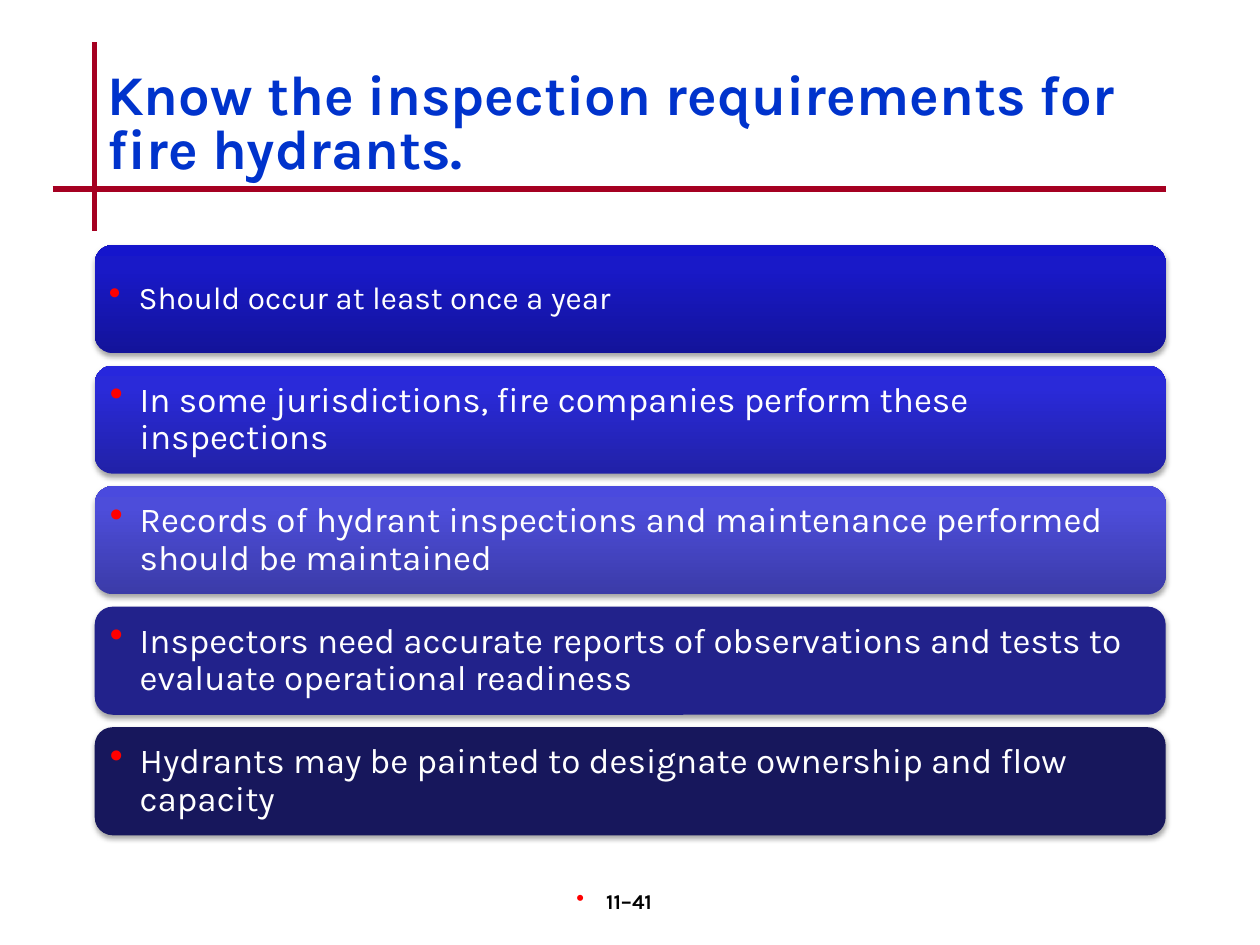
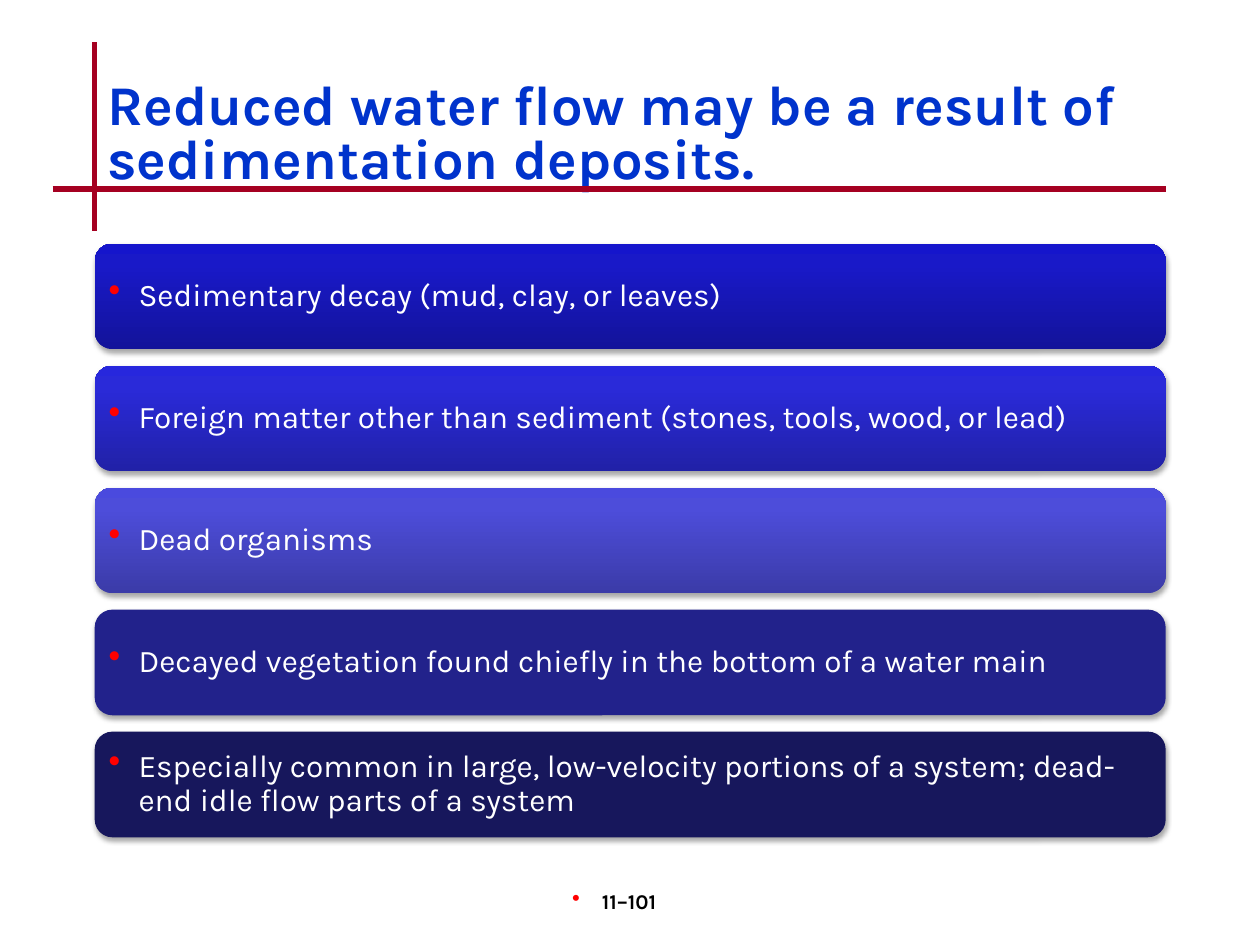
import copy

import pptx
import pptx.dml.color
import pptx.enum.shapes
import pptx.enum.text
import pptx.oxml
import pptx.oxml.ns
import pptx.util
from pptx.util import Cm

FONT = "Karla"
COLORS = {
    "title": "0033CC",
    "rule": "A50021",
    "bullet": "FF0000",
    "bar text": "FFFFFF",
    "footer": "000000",
    "shadow": "000000",
}
# One fill per bar: three gradient stops from bottom to top, or one plain colour
BAR_FILLS = [
    ("13139A", "1919C8", "1515CC"),
    ("2121A7", "2A2AD9", "2727DD"),
    ("3B3BA8", "4D4DDA", "4A4ADE"),
    ("22228B",),
    ("17175C",),
]
STOP_POSITIONS = (0, 0.8, 1)
LEFT, WIDTH = Cm(1.91), Cm(21.59)
MIDDLE = pptx.enum.text.MSO_ANCHOR.MIDDLE


def rgb(value):
    return pptx.dml.color.RGBColor.from_string(value)


def add_xml(parent, xml):
    namespace = pptx.oxml.ns.nsdecls("a")
    parent.append(pptx.oxml.parse_xml(xml.replace("/>", f" {namespace}/>", 1)
                                      if xml.endswith("/>") and xml.count("<") == 1
                                      else xml.replace(">", f" {namespace}>", 1)))


def set_font(paragraph, size, color, bold=False):
    font = paragraph.font
    font.name = FONT
    font.size = pptx.util.Pt(size)
    font.bold = bold
    font.color.rgb = rgb(color)


def add_bullet(paragraph, margin, hanging):
    properties = paragraph._p.get_or_add_pPr()
    properties.set("marL", str(margin))
    properties.set("indent", str(-hanging))
    add_xml(properties, f'<a:buClr><a:srgbClr val="{COLORS["bullet"]}"/></a:buClr>')
    add_xml(properties, '<a:buSzPct val="110000"/>')
    add_xml(properties, '<a:buChar char="•"/>')


def add_rule(slide, x1, y1, x2, y2):
    rule = slide.shapes.add_connector(
        pptx.enum.shapes.MSO_CONNECTOR.STRAIGHT, x1, y1, x2, y2)
    rule.line.color.rgb = rgb(COLORS["rule"])
    rule.line.width = pptx.util.Pt(3)
    add_xml(rule._element.spPr, "<a:effectLst/>")


def set_title(slide, text, top):
    title = slide.shapes.title
    title.left, title.top, title.width, title.height = LEFT, top, WIDTH, Cm(2.54)
    frame = title.text_frame
    frame.text = text
    frame.vertical_anchor = MIDDLE
    frame.auto_size = pptx.enum.text.MSO_AUTO_SIZE.NONE
    paragraph = frame.paragraphs[0]
    paragraph.alignment = pptx.enum.text.PP_ALIGN.LEFT
    paragraph.line_spacing = 0.8
    set_font(paragraph, 32, COLORS["title"], bold=True)


def add_page_number(slide, text):
    box = slide.shapes.add_textbox(Cm(9.96), Cm(17.78), Cm(5.28), Cm(1.27))
    box.text_frame.word_wrap = True
    paragraph = box.text_frame.paragraphs[0]
    paragraph.text = text
    paragraph.alignment = pptx.enum.text.PP_ALIGN.CENTER
    add_bullet(paragraph, Cm(0.13), Cm(0.6))
    set_font(paragraph, 12, COLORS["footer"], bold=True)


def fill_bar(bar, colors):
    if len(colors) == 1:
        bar.fill.solid()
        bar.fill.fore_color.rgb = rgb(colors[0])
        return
    bar.fill.gradient()
    bar.fill.gradient_angle = 90
    stops = bar._element.spPr.find(".//" + pptx.oxml.ns.qn("a:gsLst"))
    stops.append(copy.deepcopy(stops[0]))
    for stop, color, position in zip(bar.fill.gradient_stops, colors, STOP_POSITIONS):
        stop.color.rgb = rgb(color)
        stop.position = position


def add_shadow(bar):
    bar.shadow.inherit = False
    effects = bar._element.spPr.find(pptx.oxml.ns.qn("a:effectLst"))
    add_xml(effects,
            '<a:outerShdw blurRad="39370" dist="22860" dir="5400000" rotWithShape="0">'
            f'<a:srgbClr val="{COLORS["shadow"]}"><a:alpha val="35000"/></a:srgbClr>'
            "</a:outerShdw>")


def add_bar(slide, text, size, top, height, colors):
    bar = slide.shapes.add_shape(
        pptx.enum.shapes.MSO_SHAPE.ROUNDED_RECTANGLE, LEFT, top, WIDTH, height)
    fill_bar(bar, colors)
    bar.line.fill.background()
    add_shadow(bar)
    frame = bar.text_frame
    frame.word_wrap = True
    frame.vertical_anchor = MIDDLE
    inset = Cm(size / 100)
    frame.margin_left = frame.margin_right = inset
    frame.margin_top = frame.margin_bottom = inset
    paragraph = frame.paragraphs[0]
    paragraph.text = text
    paragraph.alignment = pptx.enum.text.PP_ALIGN.LEFT
    paragraph.line_spacing = 0.9
    add_bullet(paragraph, Cm(0.6), Cm(0.6))
    set_font(paragraph, size, COLORS["bar text"])


def add_bar_slide(presentation, title, title_top, number, bars, top, height, pitch):
    slide = presentation.slides.add_slide(presentation.slide_layouts[5])
    # Crossed rules, title and page number
    add_rule(slide, LEFT, Cm(0.85), LEFT, Cm(4.66))
    add_rule(slide, Cm(1.06), Cm(3.81), LEFT + WIDTH, Cm(3.81))
    set_title(slide, title, title_top)
    add_page_number(slide, number)
    # Stack of bars
    for index, ((text, size), colors) in enumerate(zip(bars, BAR_FILLS)):
        add_bar(slide, text, size, top + index * pitch, height, colors)


def main():
    presentation = pptx.Presentation()
    presentation.slide_width, presentation.slide_height = Cm(25.4), Cm(19.05)

    # Hydrant inspections
    add_bar_slide(
        presentation, "Know the inspection requirements for fire hydrants.",
        Cm(1.27), "11–41",
        [("Should occur at least once a year", 18),
         ("In some jurisdictions, fire companies perform these inspections", 20),
         ("Records of hydrant inspections and maintenance performed "
          "should be maintained", 20),
         ("Inspectors need accurate reports of observations and tests to "
          "evaluate operational readiness", 20),
         ("Hydrants may be painted to designate ownership and flow capacity", 20)],
        top=Cm(4.94), height=Cm(2.18), pitch=Cm(2.43))

    # Sedimentation deposits
    deposits = [
        "Sedimentary decay (mud, clay, or leaves)",
        "Foreign matter other than sediment (stones, tools, wood, or lead)",
        "Dead organisms",
        "Decayed vegetation found chiefly in the bottom of a water main",
        "Especially common in large, low-velocity portions of a system; "
        "dead-end idle flow parts of a system",
    ]
    add_bar_slide(
        presentation, "Reduced water flow may be a result of sedimentation deposits.",
        Cm(1.48), "11–101", [(text, 18) for text in deposits],
        top=Cm(4.91), height=Cm(2.13), pitch=Cm(2.46))

    presentation.save("out.pptx")


if __name__ == "__main__":
    main()
